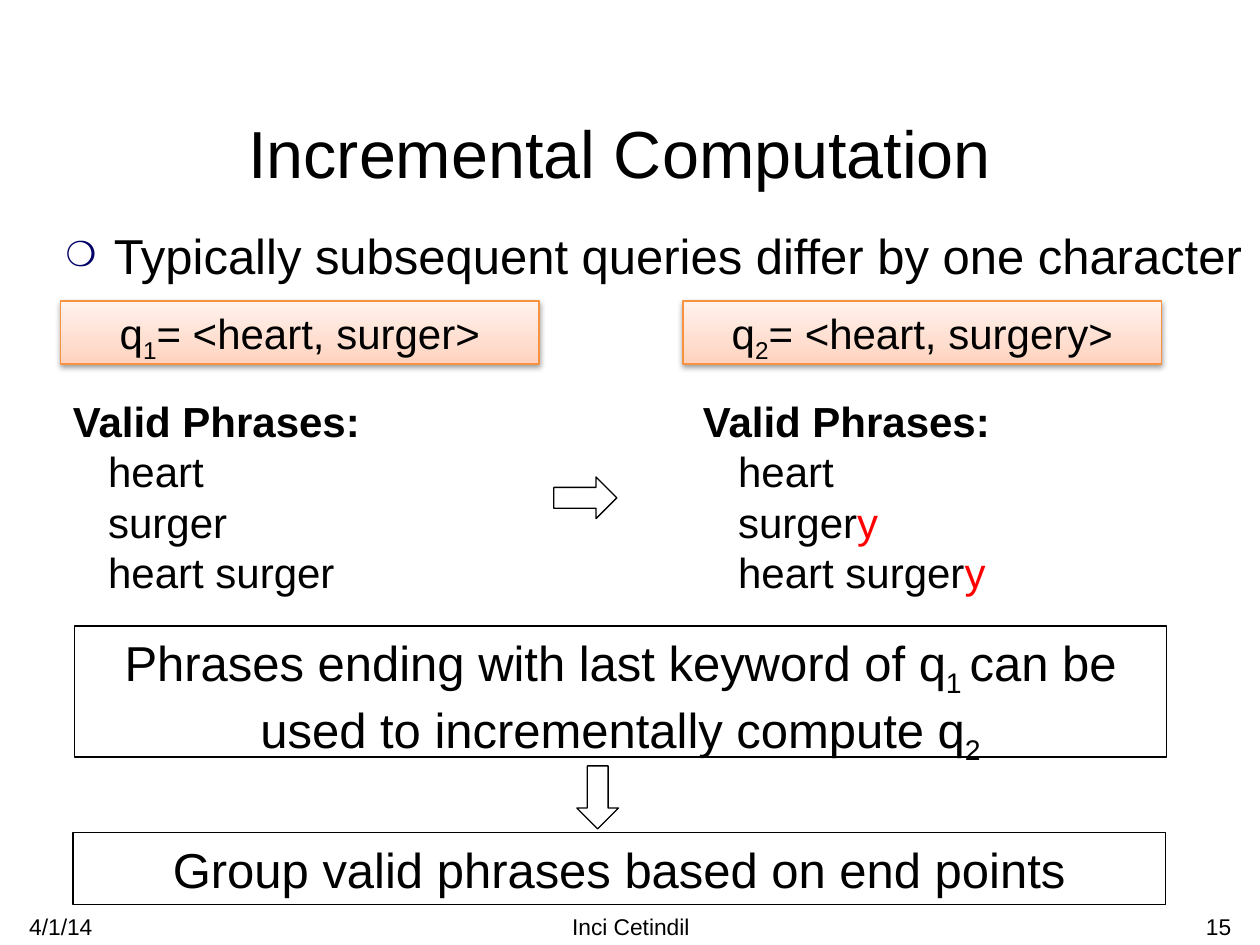
from dataclasses import dataclass

from pptx import Presentation
from pptx.dml.color import RGBColor
from pptx.enum import shapes, text
from pptx.oxml import parse_xml
from pptx.oxml.ns import nsdecls, qn
from pptx.util import Cm, Pt

COLORS = {
    "ink": "000000", "paper": "FFFFFF", "accent": "FF0000", "bullet": "000066",
    "query_line": "F69240", "query_low": "FFD2BD", "query_mid": "FFDED0",
    "query_high": "FFF2ED",
}
FONT = "Arial"
LEFT, CENTER, RIGHT = text.PP_ALIGN.LEFT, text.PP_ALIGN.CENTER, text.PP_ALIGN.RIGHT
INDENT = Cm(0.71)


@dataclass
class Piece:
    words: str
    subscript: bool = False
    color: str | None = None


@dataclass
class Line:
    pieces: list[Piece]
    bold: bool = False
    indent: int = 0


@dataclass
class Box:
    left: float
    top: float
    width: float
    height: float
    lines: list[Line]
    size: float
    align: text.PP_ALIGN = CENTER
    fill: str | None = None
    line: str | None = None


@dataclass
class Arrow:
    left: float
    top: float
    rotation: float = 0


def rgb(name: str) -> RGBColor:
    return RGBColor.from_string(COLORS[name])


def place(shape, left: float, top: float, width: float, height: float) -> None:
    shape.left, shape.top = Cm(left), Cm(top)
    shape.width, shape.height = Cm(width), Cm(height)


def style(paragraph, size: float, align=None, bold: bool = False) -> None:
    paragraph.alignment = align
    font = paragraph.font
    font.name, font.size, font.bold = FONT, Pt(size), bold
    font.color.rgb = rgb("ink")


def write(frame, lines: list[Line], size: float, align) -> None:
    for number, line in enumerate(lines):
        paragraph = frame.add_paragraph() if number else frame.paragraphs[0]
        if line.indent:
            paragraph._p.get_or_add_pPr().set("marL", str(line.indent))
        style(paragraph, size, align, line.bold)
        for piece in line.pieces:
            run = paragraph.add_run()
            run.text = piece.words
            if piece.subscript:
                run.font._element.set("baseline", "-25000")
            if piece.color:
                run.font.color.rgb = rgb(piece.color)


def paint(shape, fill: str | None, line: str | None) -> None:
    shape.shadow.inherit = False
    if fill:
        shape.fill.solid()
        shape.fill.fore_color.rgb = rgb(fill)
    else:
        shape.fill.background()
    if line:
        shape.line.color.rgb = rgb(line)
        shape.line.width = Pt(0.75)
    else:
        shape.line.fill.background()


def add_box(slide, box: Box):
    shape = slide.shapes.add_shape(
        shapes.MSO_SHAPE.RECTANGLE,
        Cm(box.left), Cm(box.top), Cm(box.width), Cm(box.height))
    paint(shape, box.fill, box.line)
    frame = shape.text_frame
    frame.word_wrap = True
    frame.auto_size = text.MSO_AUTO_SIZE.SHAPE_TO_FIT_TEXT
    frame.vertical_anchor = text.MSO_ANCHOR.TOP
    write(frame, box.lines, box.size, box.align)
    return shape


def add_query(slide, left: float, number: str, keywords: str) -> None:
    """Draw a query box with an upward gradient and a soft shadow."""
    pieces = [Piece("q"), Piece(number, subscript=True), Piece(f"= <{keywords}>")]
    shape = add_box(slide, Box(left, 6.07, 9.65, 1.27, [Line(pieces)], 24,
                               line="query_line"))
    stops = "".join(
        f'<a:gs pos="{percent * 1000}"><a:srgbClr val="{COLORS[name]}"/></a:gs>'
        for percent, name in ((0, "query_low"), (35, "query_mid"), (100, "query_high")))
    properties = shape._element.spPr
    properties.replace(properties.find(qn("a:noFill")), parse_xml(
        f'<a:gradFill {nsdecls("a")} rotWithShape="1"><a:gsLst>{stops}</a:gsLst>'
        '<a:lin ang="16200000" scaled="0"/></a:gradFill>'))
    properties.replace(properties.find(qn("a:effectLst")), parse_xml(
        f'<a:effectLst {nsdecls("a")}><a:outerShdw blurRad="{Pt(3.1)}" '
        f'dist="{Pt(1.6)}" dir="5400000" rotWithShape="0">'
        f'<a:srgbClr val="{COLORS["ink"]}"><a:alpha val="38000"/></a:srgbClr>'
        '</a:outerShdw></a:effectLst>'))


def add_phrases(slide, left: float, phrases: list[list[Piece]]) -> None:
    lines = [Line([Piece("Valid Phrases:")], bold=True)]
    lines += [Line(pieces, indent=INDENT) for pieces in phrases]
    add_box(slide, Box(left, 7.85, 7.47, 4.37, lines, 24, LEFT, fill="paper"))


def add_arrow(slide, arrow: Arrow) -> None:
    shape = slide.shapes.add_shape(shapes.MSO_SHAPE.DOWN_ARROW, Cm(arrow.left),
                                   Cm(arrow.top), Cm(0.84), Cm(1.27))
    shape.rotation = arrow.rotation
    paint(shape, None, "ink")


def add_footer(slide, left: float, width: float, words: str, align) -> None:
    footer = slide.shapes.add_textbox(Cm(left), Cm(18.29), Cm(width), Cm(1.32))
    frame = footer.text_frame
    frame.word_wrap = True
    frame.margin_left = frame.margin_right = Cm(0.23)
    frame.margin_top = frame.margin_bottom = Cm(0.11)
    write(frame, [Line([Piece(words)])], 13, align)


def fill_placeholders(slide) -> None:
    title, body = slide.shapes.title, slide.placeholders[1]
    place(title, 0.51, 1.6, 23.98, 3.18)
    place(body, 1.07, 4.6, 24.33, 1.85)
    title.text_frame.text = "Incremental Computation"
    body.text_frame.text = "Typically subsequent queries differ by one character"
    title.text_frame.vertical_anchor = text.MSO_ANCHOR.MIDDLE
    body.text_frame.vertical_anchor = text.MSO_ANCHOR.TOP

    bullet = body.text_frame.paragraphs[0]._p.get_or_add_pPr()
    bullet.set("marL", str(Cm(0.97)))
    bullet.set("indent", str(-Cm(0.97)))
    for tag in (f'buClr {nsdecls("a")}><a:srgbClr val="{COLORS["bullet"]}"/></a:buClr',
                f'buSzPct {nsdecls("a")} val="70000"/',
                f'buChar {nsdecls("a")} char="❍"/'):
        bullet.append(parse_xml(f"<a:{tag}>"))

    for shape, size, align in ((title, 38, CENTER), (body, 28, LEFT)):
        frame = shape.text_frame
        frame.auto_size = text.MSO_AUTO_SIZE.NONE
        frame.word_wrap = True
        paragraph = frame.paragraphs[0]
        paragraph.line_spacing = 0.85
        paragraph.space_before = Pt(0)
        style(paragraph, size, align)


def main() -> None:
    deck = Presentation()
    deck.slide_width, deck.slide_height = Cm(25.4), Cm(19.05)
    slide = deck.slides.add_slide(deck.slide_layouts[1])
    fill_placeholders(slide)

    add_footer(slide, 0.36, 5.92, "4/1/14", LEFT)
    add_footer(slide, 8.69, 8.05, "Inci Cetindil", CENTER)
    add_footer(slide, 23.42, 1.63, "15", RIGHT)

    grouping = [Line([Piece("Group valid phrases based on end points")])]
    add_box(slide, Box(1.47, 16.79, 22.02, 1.45, grouping, 28, line="ink"))
    add_query(slide, 1.22, "1", "heart, surger")
    add_query(slide, 13.77, "2", "heart, surgery")

    added = Piece("y", color="accent")
    phrases = [Piece("heart")], [Piece("surger")], [Piece("heart surger")]
    add_phrases(slide, 1.22, list(phrases))
    add_phrases(slide, 13.92, [phrases[0], *(p + [added] for p in phrases[1:])])

    reuse = [Line([Piece("Phrases ending with last keyword of q"),
                   Piece("1 ", subscript=True),
                   Piece("can be used to incrementally compute q"),
                   Piece("2", subscript=True)])]
    add_box(slide, Box(1.5, 12.62, 22.02, 2.64, reuse, 28, line="ink"))
    for arrow in (Arrow(11.63, 15.44), Arrow(11.38, 9.4, rotation=270)):
        add_arrow(slide, arrow)
    deck.save("out.pptx")


if __name__ == "__main__":
    main()
